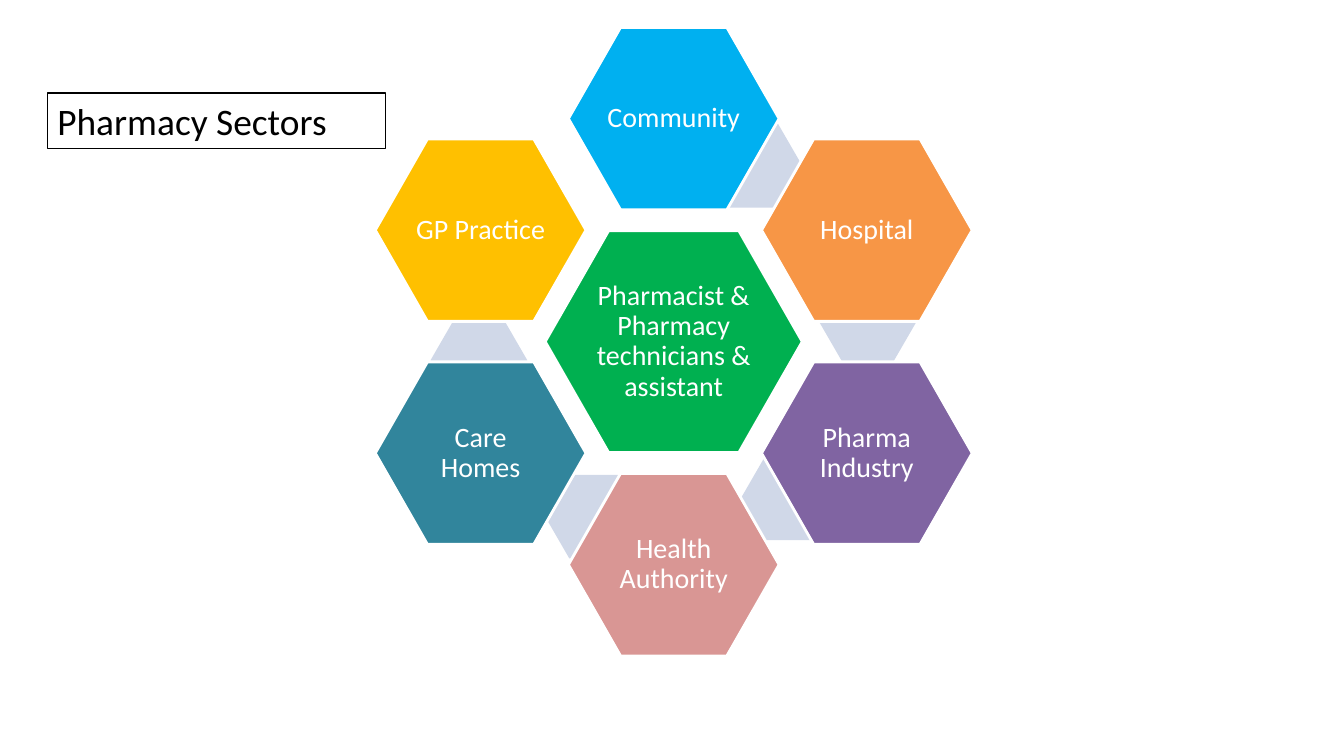
from dataclasses import dataclass
from math import cos, radians, sin

from pptx import Presentation
from pptx.dml.color import RGBColor
from pptx.enum.shapes import MSO_SHAPE as Preset
from pptx.enum.text import MSO_ANCHOR as Anchor, MSO_AUTO_SIZE as AutoSize, PP_ALIGN as Align
from pptx.util import Cm, Pt

COLOURS = {
    "white": "FFFFFF", "black": "000000", "link": "D0D8E8", "green": "00B050",
    "blue": "00B0F0", "orange": "F79646", "purple": "8064A2", "pink": "D99694",
    "teal": "31859C", "yellow": "FFC000",
}
FONT = "Calibri"
CENTRE = (16.98, 8.61)
RADIUS = 5.62
HUB_SIZE = (6.48, 5.59)
SECTOR_SIZE = (5.31, 4.6)
LINK_SIZE = (2.44, 2.11)


@dataclass
class Sector:
    label: str
    colour: str
    link: tuple[float, float] | None = None  # centre of the link behind it


# Clockwise from the top
SECTORS = [
    Sector("Community", "blue", (19, 4.18)),
    Sector("Hospital", "orange", (21.87, 8.12)),
    Sector("Pharma Industry", "purple", (19.89, 12.56)),
    Sector("Health Authority", "pink", (14.96, 13.02)),
    Sector("Care Homes", "teal", (12.07, 9.08)),
    Sector("GP Practice", "yellow"),
]


def rgb(name: str) -> RGBColor:
    return RGBColor.from_string(COLOURS[name])


def format_text(frame, size: float, colour: str, align) -> None:
    para = frame.paragraphs[0]
    para.alignment = align
    for span in para.runs:
        span.font.name = FONT
        span.font.size = Pt(size)
        span.font.color.rgb = rgb(colour)


def add_hexagon(slide, centre: tuple[float, float], size: tuple[float, float],
                colour: str, slant: float):
    (x, y), (width, height) = centre, size
    shape = slide.shapes.add_shape(Preset.HEXAGON, Cm(x - width / 2), Cm(y - height / 2),
                                   Cm(width), Cm(height))
    shape.adjustments[0] = slant
    shape.shadow.inherit = False
    shape.fill.solid()
    shape.fill.fore_color.rgb = rgb(colour)
    shape.line.fill.background()
    return shape


def add_labelled(slide, label: str, centre: tuple[float, float],
                 size: tuple[float, float], colour: str) -> None:
    shape = add_hexagon(slide, centre, size, colour, 0.286)
    shape.line.color.rgb = rgb("white")
    shape.line.width = Pt(2)
    frame = shape.text_frame
    frame.text = label
    frame.word_wrap = True
    frame.vertical_anchor = Anchor.MIDDLE
    frame.margin_left = frame.margin_right = Cm(0.07)
    frame.margin_top = frame.margin_bottom = Cm(0.07)
    frame.paragraphs[0].line_spacing = 0.9
    format_text(frame, 20, "white", Align.CENTER)


def add_title(slide, text: str) -> None:
    title = slide.shapes.title
    title.left, title.top, title.width, title.height = Cm(1.19), Cm(2.34), Cm(8.53), Cm(1.4)
    title.line.color.rgb = rgb("black")
    title.line.width = Pt(1)
    frame = title.text_frame
    frame.text = text
    frame.auto_size = AutoSize.NONE
    frame.vertical_anchor = Anchor.MIDDLE
    format_text(frame, 26.7, "black", Align.LEFT)


def main() -> None:
    deck = Presentation()
    deck.slide_width, deck.slide_height = Cm(33.87), Cm(19.05)
    page = deck.slides.add_slide(deck.slide_layouts[5])

    # Hub
    add_labelled(page, "Pharmacist & Pharmacy technicians & assistant",
                 CENTRE, HUB_SIZE, "green")

    # Ring of sectors, each above its link
    for index, sector in enumerate(SECTORS):
        if sector.link:
            add_hexagon(page, sector.link, LINK_SIZE, "link", 0.289)
        angle = radians(index * 360 / len(SECTORS))
        centre = (CENTRE[0] + RADIUS * sin(angle), CENTRE[1] - RADIUS * cos(angle))
        add_labelled(page, sector.label, centre, SECTOR_SIZE, sector.colour)

    add_title(page, "Pharmacy Sectors")
    deck.save("out.pptx")


if __name__ == "__main__":
    main()
